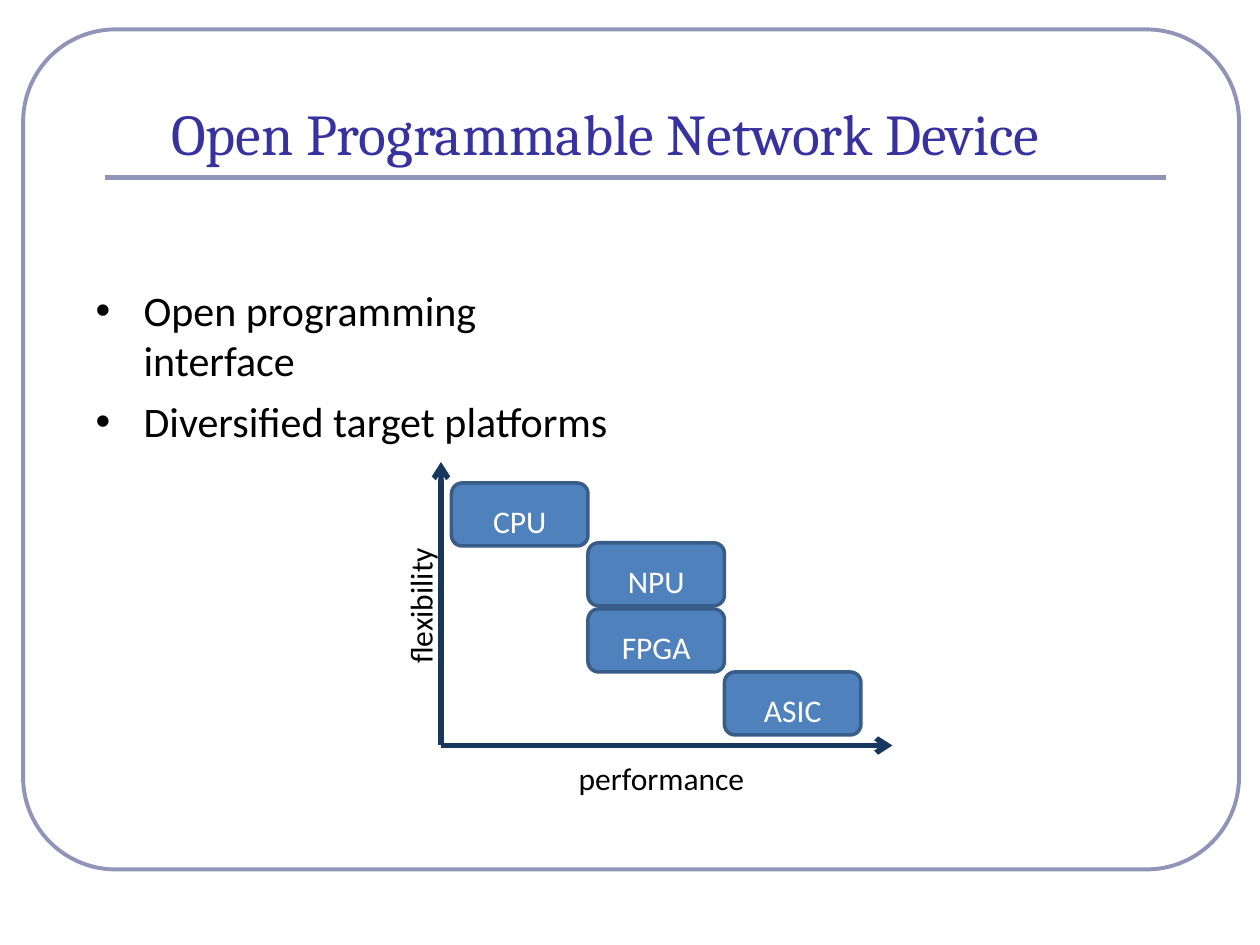
from lxml import etree
from pptx import Presentation
from pptx.dml.color import RGBColor
from pptx.enum.shapes import MSO_CONNECTOR, MSO_SHAPE
from pptx.enum.text import MSO_ANCHOR, PP_ALIGN
from pptx.oxml.ns import qn
from pptx.util import Inches, Pt

ROUNDED = MSO_SHAPE.ROUNDED_RECTANGLE
STRAIGHT = MSO_CONNECTOR.STRAIGHT
LEFT, CENTER = PP_ALIGN.LEFT, PP_ALIGN.CENTER
TOP, MIDDLE, BOTTOM = MSO_ANCHOR.TOP, MSO_ANCHOR.MIDDLE, MSO_ANCHOR.BOTTOM
COLORS = {
    "frame": "9094B8", "title": "3732A0", "text": "000000", "label": "FFFFFF",
    "axis": "17375E", "box": "4F81BC", "outline": "385D89",
}


class SlideBuilder:
    """Draws styled elements on a slide measured in a grid of 120 columns by 90 rows."""

    def __init__(self, deck):
        self.slide = deck.slides.add_slide(deck.slide_layouts[6])
        self.column = deck.slide_width / 120
        self.row = deck.slide_height / 90

    def place(self, x, y, *size):
        lengths = (x, y, *size)
        return [round(n * (self.row if i % 2 else self.column)) for i, n in enumerate(lengths)]

    def color(self, name):
        return RGBColor.from_string(COLORS[name])

    def fill_text(self, frame, lines, size, color, align=LEFT, anchor=TOP, font="Calibri"):
        frame.word_wrap = True
        frame.vertical_anchor = anchor
        frame.margin_left = frame.margin_right = frame.margin_top = frame.margin_bottom = 0
        frame.text = "\n".join(lines)
        for paragraph in frame.paragraphs:
            paragraph.alignment = align
            paragraph.font.name = font
            paragraph.font.size = Pt(size)
            paragraph.font.color.rgb = self.color(color)

    def text(self, area, lines, size, color="text", **style):
        frame = self.slide.shapes.add_textbox(*self.place(*area)).text_frame
        self.fill_text(frame, lines, size, color, **style)
        return frame

    def bullets(self, area, lines, size):
        frame = self.text(area, lines, size)
        for paragraph in frame.paragraphs[1:]:
            paragraph.space_before = Pt(5.8)
        for paragraph in frame.paragraphs:
            properties = paragraph._p.get_or_add_pPr()
            properties.set("marL", str(Inches(0.39)))
            properties.set("indent", str(Inches(-0.38)))
            bullet = etree.Element(qn("a:buChar"), char="•")
            typeface = etree.Element(qn("a:buFont"), typeface="Arial")
            properties.find(qn("a:defRPr")).addprevious(typeface)
            typeface.addnext(bullet)

    def vertical_text(self, area, line, size):
        frame = self.text(area, [line], size, align=CENTER)
        frame._txBody.bodyPr.set("vert", "vert270")

    def rounded(self, area, radius, outline, width, fill=None):
        shape = self.slide.shapes.add_shape(ROUNDED, *self.place(*area))
        shape.shadow.inherit = False
        shape.adjustments[0] = radius
        shape.line.color.rgb = self.color(outline)
        shape.line.width = Pt(width)
        if fill:
            shape.fill.solid()
            shape.fill.fore_color.rgb = self.color(fill)
        else:
            shape.fill.background()
        return shape

    def platform(self, x, y, name):
        box = self.rounded((x, y, 13, 6), 0.17, "outline", 2, "box")
        self.fill_text(box.text_frame, [name], 18, "label", CENTER, MIDDLE)
        box.text_frame.margin_top = Inches(0.1)

    def line(self, start, end, color, width, arrow=False):
        line = self.slide.shapes.add_connector(STRAIGHT, *self.place(*start, *end))
        line.line.color.rgb = self.color(color)
        line.line.width = Pt(width)
        if arrow:
            etree.SubElement(line.line._ln, qn("a:tailEnd"), type="arrow")
        etree.SubElement(line._element.spPr, qn("a:effectLst"))


def main():
    deck = Presentation()
    deck.slide_width, deck.slide_height = Inches(10), Inches(7.5)
    page = SlideBuilder(deck)

    page.rounded((2.2, 2.8, 115.8, 80), 0.11, "frame", 2.25)
    page.line((10, 16.9), (111, 16.9), "frame", 3)
    page.text((16.3, 9.2, 88, 6.7), ["Open Programmable Network Device"], 33, "title",
              anchor=BOTTOM, font="Cambria")
    page.bullets((9, 27.1, 50.4, 10.7),
                 ["Open programming interface", "Diversified target platforms"], 24)

    origin = (42, 71)
    page.line(origin, (85, 71), "axis", 3, arrow=True)
    page.line(origin, (42, 44), "axis", 3, arrow=True)
    platforms = [("CPU", 0, 46), ("NPU", 1, 51.7), ("FPGA", 1, 58), ("ASIC", 2, 64)]
    for name, step, top in platforms:
        page.platform(43 + 13 * step, top, name)
    page.text((50, 72.3, 26, 3.7), ["performance"], 18, align=CENTER)
    page.vertical_text((38.2, 52, 3.6, 11.4), "flexibility", 18)

    deck.save("out.pptx")


if __name__ == "__main__":
    main()
